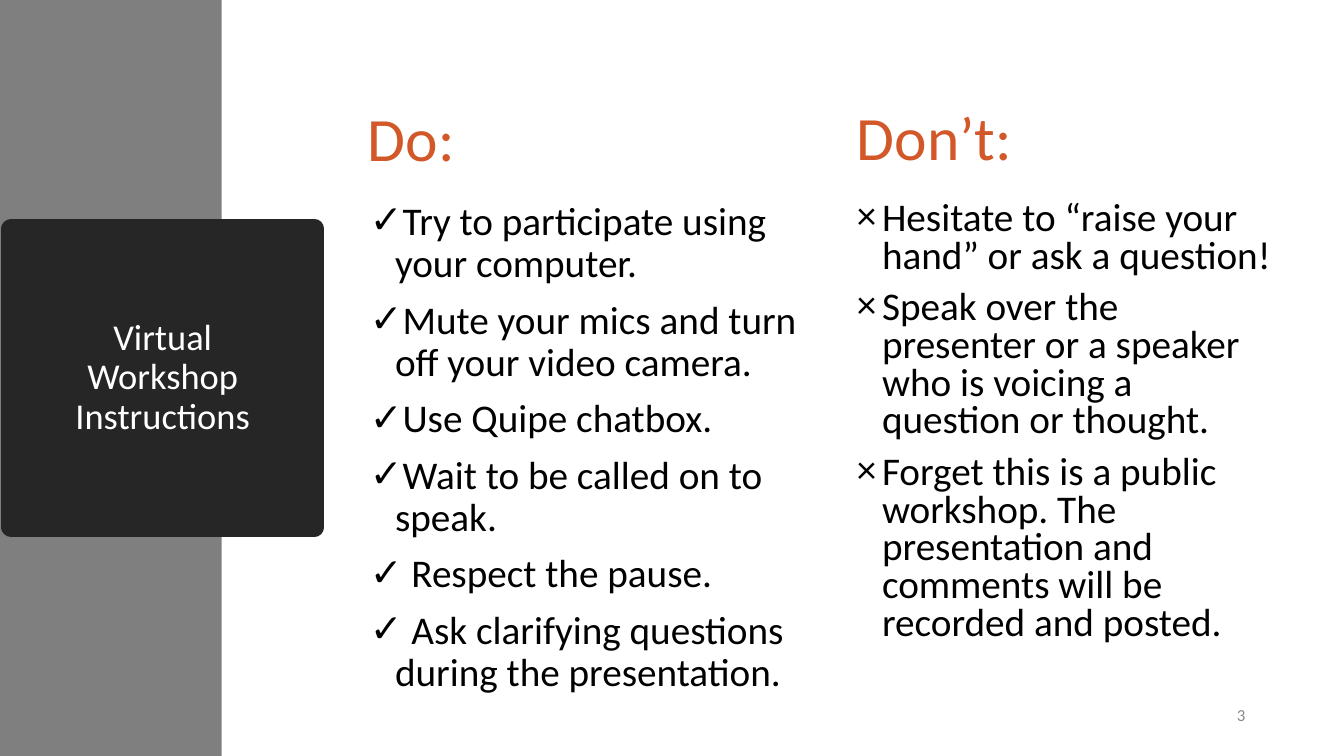
from lxml import etree
from pptx import Presentation
from pptx.dml.color import RGBColor
from pptx.enum.shapes import MSO_SHAPE
from pptx.enum.text import MSO_ANCHOR, MSO_AUTO_SIZE, PP_ALIGN
from pptx.oxml.ns import qn
from pptx.util import Inches, Pt

RECTANGLE = MSO_SHAPE.RECTANGLE
MIDDLE, TOP = MSO_ANCHOR.MIDDLE, MSO_ANCHOR.TOP
LEFT, CENTER, RIGHT = PP_ALIGN.LEFT, PP_ALIGN.CENTER, PP_ALIGN.RIGHT
NO_AUTOFIT = MSO_AUTO_SIZE.NONE

FONT = "Calibri"
WHITE = RGBColor(0xFF, 0xFF, 0xFF)
BLACK = RGBColor(0x00, 0x00, 0x00)
ORANGE = RGBColor(0xD2, 0x58, 0x29)
CHARCOAL = RGBColor(0x26, 0x26, 0x26)
BAND_GRAY = RGBColor(0x7F, 0x7F, 0x7F)
NUMBER_GRAY = RGBColor(0x89, 0x89, 0x89)

TITLE = "Virtual\vWorkshop Instructions"
SLIDE_NUMBER = "3"
COLUMNS = [
    {
        "heading": "Do:",
        "heading_box": (3.55, 0.94, 2.93, 0.84),
        "list_box": (3.57, 1.95, 4.49, 4.76),
        "bullet": "✓",
        "line_spacing": 0.9,
        "items": [
            "Try to participate using your computer.",
            "Mute your mics and turn off your video camera.",
            "Use Quipe chatbox.",
            "Wait to be called on to speak.",
            " Respect the pause.",
            " Ask clarifying questions during the presentation.",
        ],
    },
    {
        "heading": "Don’t:",
        "heading_box": (8.4, 0.93, 2.93, 0.84),
        "list_box": (8.4, 1.95, 4.31, 4.77),
        "bullet": "×",
        "line_spacing": 0.8,
        "items": [
            "Hesitate to “raise your hand” or ask a question!",
            "Speak over the presenter or a speaker who is voicing a question or thought.",
            "Forget this is a public workshop. The presentation and comments "
            "will be recorded and posted.",
        ],
    },
]


def fill_text(shape, text, size, color, alignment=LEFT, anchor=TOP, line_spacing=None):
    frame = shape.text_frame
    frame.text = text
    frame.word_wrap = True
    frame.auto_size = NO_AUTOFIT
    frame.vertical_anchor = anchor
    for paragraph in frame.paragraphs:
        paragraph.alignment = alignment
        paragraph.line_spacing = line_spacing
        for run in paragraph.runs:
            run.font.name = FONT
            run.font.size = Pt(size)
            run.font.color.rgb = color
    return frame.paragraphs


def add_text(slide, box, *text_settings):
    textbox = slide.shapes.add_textbox(*map(Inches, box))
    return fill_text(textbox, *text_settings)


def add_bullet(paragraph, character):
    properties = paragraph._p.get_or_add_pPr()
    properties.set("marL", str(Inches(0.25)))
    properties.set("indent", str(-Inches(0.25)))
    etree.SubElement(properties, qn("a:buFont"), typeface=FONT)
    etree.SubElement(properties, qn("a:buChar"), char=character)


def add_column(slide, column):
    add_text(slide, column["heading_box"], column["heading"], 44, ORANGE)
    paragraphs = add_text(slide, column["list_box"], "\n".join(column["items"]),
                          28, BLACK, LEFT, TOP, column["line_spacing"])
    for index, paragraph in enumerate(paragraphs):
        paragraph.space_before = Pt(10 if index else 0)
        add_bullet(paragraph, column["bullet"])


def add_title(slide):
    title = slide.shapes.title
    title.left, title.top, title.width, title.height = map(Inches, (0.11, 2.27, 3.01, 2.96))
    title.fill.solid()
    title.fill.fore_color.rgb = CHARCOAL
    title.line.color.rgb = CHARCOAL
    title.line.width = Pt(13.75)
    etree.SubElement(title.line._get_or_add_ln(), qn("a:round"))
    fill_text(title, TITLE, 26, WHITE, CENTER, MIDDLE, 0.9)
    return title


def add_side_band(slide, title):
    band = slide.shapes.add_shape(RECTANGLE, 0, 0, Inches(2.2), Inches(7.5))
    band.shadow.inherit = False
    band.fill.solid()
    band.fill.fore_color.rgb = BAND_GRAY
    band.line.fill.background()
    title._element.addprevious(band._element)


def main():
    presentation = Presentation()
    presentation.slide_width = Inches(13.33)
    presentation.slide_height = Inches(7.5)
    slide = presentation.slides.add_slide(presentation.slide_layouts[5])
    title = add_title(slide)
    add_side_band(slide, title)
    add_text(slide, (11.84, 6.89, 0.61, 0.4), SLIDE_NUMBER, 12, NUMBER_GRAY, RIGHT, MIDDLE)
    for column in COLUMNS:
        add_column(slide, column)
    presentation.save("out.pptx")


if __name__ == "__main__":
    main()
